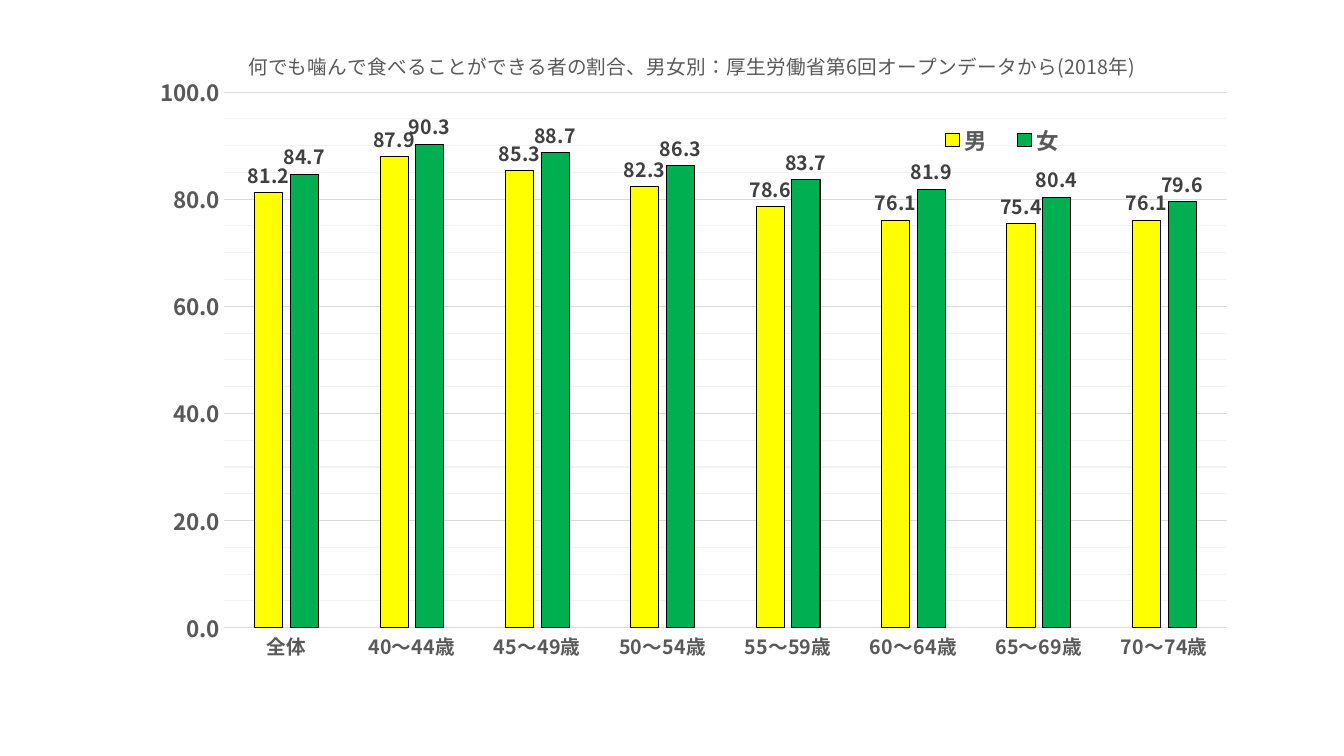
from copy import deepcopy

from lxml.etree import SubElement
from pptx import Presentation
from pptx.chart.data import CategoryChartData
from pptx.dml.color import RGBColor
from pptx.enum.chart import (XL_CHART_TYPE, XL_LABEL_POSITION,
                             XL_LEGEND_POSITION, XL_TICK_MARK)
from pptx.oxml.ns import qn
from pptx.util import Inches, Pt

YELLOW = RGBColor(0xFF, 0xFF, 0x00)
GREEN = RGBColor(0x00, 0xB0, 0x50)
BLACK = RGBColor(0x00, 0x00, 0x00)
AXIS_GREY = RGBColor(0x59, 0x59, 0x59)
LABEL_GREY = RGBColor(0x40, 0x40, 0x40)
GRID_GREY = RGBColor(0xD9, 0xD9, 0xD9)
MINOR_GREY = RGBColor(0xF2, 0xF2, 0xF2)

TITLE = "何でも噛んで食べることができる者の割合、男女別：厚生労働省第6回オープンデータから(2018年)"
AGE_GROUPS = ["全体"] + [f"{age}～{age + 4}歳" for age in range(40, 75, 5)]
CHEWING_RATES = {
    "男": ([81.2, 87.9, 85.3, 82.3, 78.6, 76.1, 75.4, 76.1], YELLOW),
    "女": ([84.7, 90.3, 88.7, 86.3, 83.7, 81.9, 80.4, 79.6], GREEN),
}


def apply(target, formats):
    for name, value in formats.items():
        setattr(target, name, value)


class ChartSlide:
    typeface = "Noto Sans CJK JP"
    number_format = "0.0"

    def __init__(self, deck):
        self.width, self.height = deck.slide_width, deck.slide_height
        self.slide = deck.slides.add_slide(deck.slide_layouts[6])

    def style_font(self, font, size, color, bold=True):
        apply(font, {"size": Pt(size), "bold": bold, "name": self.typeface})
        font.color.rgb = color

    def style_line(self, line, color):
        line.width = Pt(0.75)
        line.color.rgb = color

    def style_numbers(self, target):
        apply(target, {"number_format": self.number_format,
                       "number_format_is_linked": False})

    def place(self, tag, after=None, **shares):
        """Position a chart part by shares of the chart's size."""
        parent = self.chart.element.find(f".//{qn(tag)}")
        for old in parent.findall(qn("c:layout")):
            parent.remove(old)
        layout = SubElement(parent, qn("c:layout"))
        if after:
            parent.find(qn(after)).addnext(layout)
        else:
            parent.insert(0, layout)
        manual = SubElement(layout, qn("c:manualLayout"))
        if tag == "c:plotArea":
            SubElement(manual, qn("c:layoutTarget")).set("val", "inner")
        for axis in "xy":
            SubElement(manual, qn(f"c:{axis}Mode")).set("val", "edge")
        for side, share in shares.items():
            SubElement(manual, qn(f"c:{side}")).set("val", str(share))

    def add_columns(self, left, top, width, height):
        data = CategoryChartData(number_format=self.number_format)
        data.categories = AGE_GROUPS
        for sex, (rates, _) in CHEWING_RATES.items():
            data.add_series(sex, rates)
        self.chart = self.slide.shapes.add_chart(
            XL_CHART_TYPE.COLUMN_CLUSTERED,
            int(left * self.width), int(top * self.height),
            int(width * self.width), int(height * self.height), data).chart
        self.style_font(self.chart.font, 10, BLACK, bold=False)
        columns = self.chart.plots[0]
        apply(columns, {"gap_width": 219, "overlap": -27,
                        "vary_by_categories": False})
        for series, (_, color) in zip(columns.series, CHEWING_RATES.values()):
            series.format.fill.solid()
            series.format.fill.fore_color.rgb = color
            self.style_line(series.format.line, BLACK)
            labels = series.data_labels
            apply(labels, {"show_value": True,
                           "position": XL_LABEL_POSITION.OUTSIDE_END})
            self.style_numbers(labels)
            self.style_font(labels.font, 14, LABEL_GREY)
        self.place("c:plotArea", x=0.092, y=0.099, w=0.874, h=0.79)

    def add_axes(self):
        ages, rates = self.chart.category_axis, self.chart.value_axis
        for axis, size in ((ages, 14), (rates, 16)):
            apply(axis, {"major_tick_mark": XL_TICK_MARK.NONE,
                         "minor_tick_mark": XL_TICK_MARK.NONE})
            self.style_font(axis.tick_labels.font, size, AXIS_GREY)
        self.style_line(ages.format.line, GRID_GREY)
        apply(rates, {"minimum_scale": 0, "maximum_scale": 100,
                      "major_unit": 20, "minor_unit": 5,
                      "has_major_gridlines": True,
                      "has_minor_gridlines": True})
        rates.format.line.fill.background()
        self.style_numbers(rates.tick_labels)
        self.style_line(rates.major_gridlines.format.line, GRID_GREY)
        # Minor gridlines take the major style in a lighter grey
        chart_xml = self.chart.element
        major = chart_xml.find(f".//{qn('c:majorGridlines')}")
        minor = chart_xml.find(f".//{qn('c:minorGridlines')}")
        minor.append(deepcopy(major.find(qn("c:spPr"))))
        minor.find(f".//{qn('a:srgbClr')}").set("val", str(MINOR_GREY))

    def add_title(self, text):
        heading = self.chart.chart_title
        heading.include_in_layout = False
        heading.text_frame.text = text
        run = heading.text_frame.paragraphs[0].runs[0]
        self.style_font(run.font, 14, AXIS_GREY, bold=False)
        self.place("c:title", after="c:tx", x=0.11, y=0.03)

    def add_legend(self):
        self.chart.has_legend = True
        apply(self.chart.legend, {"position": XL_LEGEND_POSITION.BOTTOM,
                                  "include_in_layout": False})
        self.style_font(self.chart.legend.font, 16, AXIS_GREY)
        self.place("c:legend", after="c:legendPos",
                   x=0.7, y=0.14, w=0.14, h=0.06)

    def match_east_asian_font(self):
        for latin in list(self.chart.element.iter(qn("a:latin"))):
            east_asian = SubElement(latin.getparent(), qn("a:ea"))
            east_asian.set("typeface", self.typeface)
            latin.addnext(east_asian)


def main():
    deck = Presentation()
    apply(deck, {"slide_width": Inches(13.33), "slide_height": Inches(7.5)})
    page = ChartSlide(deck)

    # Columns by age group and sex
    page.add_columns(left=0.088, top=0.033, width=0.854, height=0.897)
    page.add_axes()

    # Title and key
    page.add_title(TITLE)
    page.add_legend()
    page.match_east_asian_font()

    deck.save("out.pptx")


if __name__ == "__main__":
    main()
